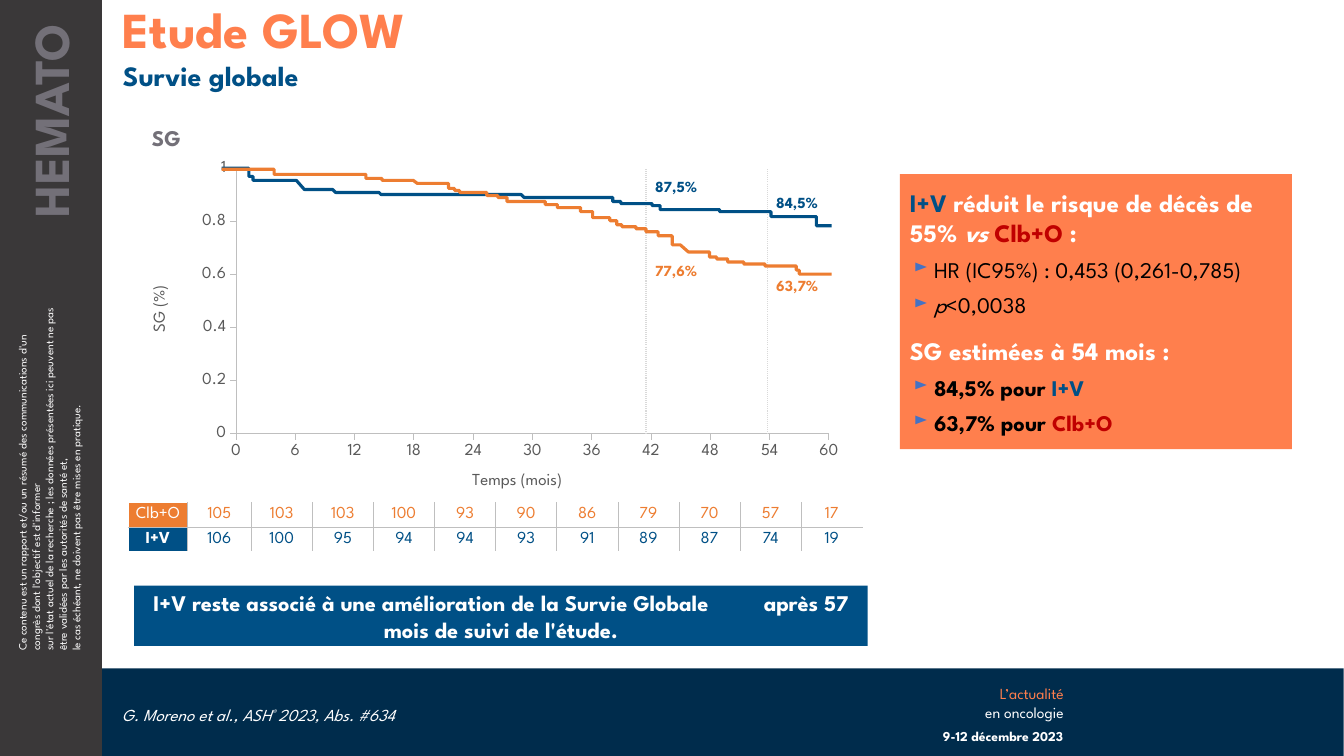
from lxml import etree
from pptx import Presentation
from pptx.chart.data import XyChartData
from pptx.dml.color import RGBColor
from pptx.enum.chart import XL_CHART_TYPE, XL_MARKER_STYLE, XL_TICK_MARK
from pptx.enum.dml import MSO_LINE
from pptx.enum.shapes import MSO_CONNECTOR, MSO_SHAPE
from pptx.enum.text import MSO_ANCHOR, PP_ALIGN
from pptx.oxml import parse_xml
from pptx.oxml.ns import nsdecls, qn
from pptx.util import Cm, Pt

FONT = "League Spartan"
WHITE = RGBColor(0xFF, 0xFF, 0xFF)
BLACK = RGBColor(0, 0, 0)
NAVY = RGBColor(0x00, 0x2C, 0x4C)
COAL = RGBColor(0x3A, 0x38, 0x39)
CORAL = RGBColor(0xFF, 0x7F, 0x4D)
BLUE = RGBColor(0x00, 0x50, 0x86)
ORANGE = RGBColor(0xED, 0x7D, 0x31)
RED = RGBColor(0xC0, 0x00, 0x00)
GREY = RGBColor(0x73, 0x70, 0x78)
INK = RGBColor(0x59, 0x59, 0x59)
RULE = RGBColor(0xBF, 0xBF, 0xBF)
PALE = RGBColor(0xD9, 0xD9, 0xD9)
TOP, MIDDLE = MSO_ANCHOR.TOP, MSO_ANCHOR.MIDDLE
LEFT, CENTER, RIGHT = PP_ALIGN.LEFT, PP_ALIGN.CENTER, PP_ALIGN.RIGHT
RECT, STRAIGHT = MSO_SHAPE.RECTANGLE, MSO_CONNECTOR.STRAIGHT
SCATTER, CIRCLE = XL_CHART_TYPE.XY_SCATTER, XL_MARKER_STYLE.CIRCLE
OUT, NONE = XL_TICK_MARK.OUTSIDE, XL_TICK_MARK.NONE
DOTS = MSO_LINE.ROUND_DOT

deck = Presentation()
deck.slide_width, deck.slide_height = Cm(33.87), Cm(19.05)
slide = deck.slides.add_slide(deck.slide_layouts[6])
shapes = slide.shapes


def box(left, top, wide, high, fill=None, anchor=TOP, align=LEFT, pads=(0.25, 0.13, 0.25, 0.13)):
    place = Cm(left), Cm(top), Cm(wide), Cm(high)
    if fill is None:
        shape = shapes.add_textbox(*place)
    else:
        shape = shapes.add_shape(RECT, *place)
        shape.shadow.inherit = False
        shape.fill.solid()
        shape.fill.fore_color.rgb = fill
        shape.line.fill.background()
    frame = shape.text_frame
    frame.word_wrap = True
    frame.vertical_anchor = anchor
    frame.margin_left, frame.margin_top, frame.margin_right, frame.margin_bottom = map(Cm, pads)
    frame.paragraphs[0].alignment = align
    return shape, frame.paragraphs[0]


def write(para, text, size, color, bold=False, italic=False):
    run = para.add_run()
    run.text = text
    font = run.font
    font.name, font.size, font.bold, font.italic = FONT, Pt(size), bold, italic
    font.color.rgb = color
    return run


# Footer and side band
box(2.57, 16.84, 31.29, 2.21, NAVY)
box(0, 0, 2.57, 19.05, COAL)

notice, para = box(-3.33, 11.1, 9.14, 1.96)
notice.rotation = 270
lines = [
    "Ce contenu est un rapport et/ou un résumé des communications d'un congrès dont l'objectif est d'informer",
    "sur l'état actuel de la recherche ; les données présentées ici peuvent ne pas être validées par les autorités de santé et,",
    "le cas échéant, ne doivent pas être mises en pratique.",
]
for row, line in enumerate(lines):
    if row:
        para.add_line_break()
    write(para, line, 8, WHITE)

topic, para = box(-2.64, 3, 7.8, 1.8, align=RIGHT, pads=(0.25, 0.13, 0.61, 0.13))
topic.rotation = 270
write(para, "HEMATO", 36, GREY, True)

para = box(22.89, 17.12, 4.17, 1.19, align=RIGHT)[1]
write(para, "L’actualité", 11, CORAL)
para.add_line_break()
write(para, "en oncologie", 11, WHITE)
para = box(22.89, 18.21, 3.91, 0.69, align=RIGHT, pads=(0.25, 0.13, 0, 0.13))[1]
write(para, "9-12 décembre 2023", 9.7, WHITE, True)

para = box(2.82, 17.63, 14.33, 0.69)[1]
write(para, "G. Moreno et al., ASH", 12, WHITE, italic=True)
mark = write(para, "® ", 12, WHITE, italic=True)
mark.font._element.set("baseline", "30000")
write(para, "2023, Abs. #634", 12, WHITE, italic=True)

# Titles
for top, high, text, size, color in [
    (0, 1.45, "Etude GLOW", 36, CORAL),
    (1.45, 0.94, "Survie globale", 20, BLUE),
]:
    para = box(2.59, top, 31.27, high, pads=(0.51, 0.13, 0.25, 0.13))[1]
    para.line_spacing = 0.9
    write(para, text, size, color, True)

# Chart with the axes
data = XyChartData()
data.add_series("Series 1").add_data_point(0.7, 2.7)
chart = shapes.add_chart(SCATTER, Cm(3.56), Cm(3.84), Cm(17.96), Cm(9.07), data).chart
chart.has_legend = chart.has_title = False
chart.font.name, chart.font.size = FONT, Pt(10)
chart.font.color.rgb = BLACK
plot = chart.plots[0]
plot.vary_by_categories = False
series = plot.series[0]
series.smooth = False
series.format.line.fill.background()
series.marker.style, series.marker.size = CIRCLE, 5
series.marker.format.fill.background()
series.marker.format.line.fill.background()

LAYOUT = "<c:layout %s><c:manualLayout>%s</c:manualLayout></c:layout>"
for axis, title, high, step, left, top in [
    (chart.category_axis, "Temps (mois)", 60, 6, 0.46, 0.88),
    (chart.value_axis, "SG (%)", 1, 0.2, 0.01, 0.36),
]:
    axis.minimum_scale, axis.maximum_scale, axis.major_unit = 0, high, step
    axis.has_major_gridlines = False
    axis.major_tick_mark, axis.minor_tick_mark = OUT, NONE
    axis.format.line.color.rgb = RULE
    axis.format.line.width = Pt(0.75)
    labels = axis.tick_labels
    labels.font.name, labels.font.size = FONT, Pt(12)
    labels.font.color.rgb = INK
    labels.number_format, labels.number_format_is_linked = "General", False
    write(axis.axis_title.text_frame.paragraphs[0], title, 12, INK)
    node = axis.axis_title._element
    for old in node.findall(qn("c:layout")):
        node.remove(old)
    spot = f'<c:xMode val="edge"/><c:yMode val="edge"/><c:x val="{left}"/><c:y val="{top}"/>'
    node.find(qn("c:tx")).addnext(parse_xml(LAYOUT % (nsdecls("c"), spot)))

area = chart._chartSpace.chart.plotArea
for old in area.findall(qn("c:layout")):
    area.remove(old)
area.insert(0, parse_xml(LAYOUT % (nsdecls("c"), (
    '<c:layoutTarget val="inner"/><c:xMode val="edge"/><c:yMode val="edge"/>'
    '<c:x val="0.133"/><c:y val="0.045"/><c:w val="0.832"/><c:h val="0.737"/>'))))

# Dotted guides at 42 and 54 months
for left in (16.28, 19.35):
    guide = shapes.add_connector(STRAIGHT, Cm(left), Cm(4.26), Cm(left), Cm(10.95))
    guide.line.color.rgb = PALE
    guide.line.width, guide.line.dash_style = Pt(0.75), DOTS
    etree.SubElement(guide._element.spPr, qn("a:effectLst"))

# Survival curves: drop position, new level, and width of a sloped drop
trial = [(247, 175), (251, 179), (294, 188, 8), (330, 191, 3), (376, 193, 2), (517, 196, 3),
         (608, 200), (616, 202), (647, 204), (655, 208), (714, 210), (765, 215), (810, 224)]
chemo = [(272, 173), (363, 177), (379, 179), (410, 182, 4), (445, 187), (451, 189), (456, 191),
         (483, 194), (494, 196), (503, 200), (541, 203), (553, 206), (576, 210), (588, 216),
         (605, 219), (612, 223), (617, 225), (631, 227), (641, 230), (653, 234), (667, 243),
         (675, 250, 8), (704, 255), (711, 257), (722, 260), (738, 262), (759, 264), (790, 268),
         (793, 272)]
for level, drops, color in [(167, trial, BLUE), (168, chemo, ORANGE)]:
    build = shapes.build_freeform(220, level, scale=Cm(2.54) / 100)
    points = []
    for left, lower, *slope in drops:
        points += [(left, level), (left + sum(slope), lower)]
        level = lower
    build.add_line_segments(points + [(825, level)], close=False)
    curve = build.convert_to_shape()
    curve.shadow.inherit = False
    curve.fill.background()
    curve.line.color.rgb = color
    curve.line.width = Pt(2.25)

for left, top, text, color in [
    (16.51, 4.32, "87,5%", BLUE), (16.51, 6.43, "77,6%", ORANGE),
    (19.56, 4.72, "84,5%", BLUE), (19.56, 6.81, "63,7%", ORANGE),
]:
    para = box(left, top, 1.6, 0.76, anchor=MIDDLE, pads=(0, 0, 0, 0))[1]
    write(para, text, 11, color, True)
para = box(3.58, 2.92, 2.06, 1.07, WHITE, MIDDLE)[1]
write(para, "SG", 16, GREY, True)

# Patients at risk
risk = [
    ("Clb+O", [105, 103, 103, 100, 93, 90, 86, 79, 70, 57, 17], ORANGE),
    ("I+V", [106, 100, 95, 94, 94, 93, 91, 89, 87, 74, 19], BLUE),
]
table = shapes.add_table(2, 12, Cm(3.23), Cm(12.67), Cm(18.5), Cm(1.22)).table
table.first_row = table.horz_banding = False
for col, wide in enumerate([1.5, 1.6] + [1.54] * 10):
    table.columns[col].width = Cm(wide)
for row, (name, counts, color) in enumerate(risk):
    table.rows[row].height = Cm(0.61)
    for col, text in enumerate([name] + counts):
        cell = table.cell(row, col)
        cell.margin_left = cell.margin_right = cell.margin_top = cell.margin_bottom = 0
        cell.vertical_anchor = MIDDLE
        para = cell.text_frame.paragraphs[0]
        para.alignment = CENTER
        write(para, str(text), 12, color if col else WHITE, not col and row == 1)
        if col:
            cell.fill.background()
        else:
            cell.fill.solid()
            cell.fill.fore_color.rgb = color
        edges = {"lnL": RULE if col else WHITE, "lnR": RULE if col < 11 else WHITE,
                 "lnT": RULE if row else WHITE, "lnB": WHITE if row else RULE}
        for spot, (edge, tint) in enumerate(edges.items()):
            cell._tc.tcPr.insert(spot, parse_xml(
                f'<a:{edge} {nsdecls("a")} w="6350"><a:solidFill><a:srgbClr val="{tint}"/>'
                f'</a:solidFill></a:{edge}>'))

# Conclusion, with one wide space
para = box(3.38, 14.76, 18.49, 1.52, BLUE, MIDDLE, CENTER)[1]
write(para, "I+V reste associé à une amélioration de la Survie Globale", 16, WHITE, True)
gap = write(para, " ", 16, WHITE, True)
gap.font._element.set("spc", "3500")
write(para, "après 57 mois de suivi de l'étude.", 16, WHITE, True)

# Key results: bullet flag, space before and after, then the runs
para = box(22.68, 4.39, 9.88, 6.93, CORAL, MIDDLE)[1]
frame = para._parent
for row, (bullet, before, after, runs) in enumerate([
    (False, 0, 6, [("I+V ", BLUE, True), ("réduit le risque de décès de 55% ", WHITE, True),
                   ("vs ", WHITE, True, True), ("Clb+O ", RED, True), (":", WHITE, True)]),
    (True, 0, 6, [("HR (IC95%) : 0,453 (0,261-0,785)", BLACK)]),
    (True, 0, 0, [("p", BLACK, False, True), ("<0,0038", BLACK)]),
    (False, 12, 6, [("SG estimées à 54 mois :", WHITE, True)]),
    (True, 0, 6, [("84,5% pour ", BLACK, True), ("I+V", BLUE, True)]),
    (True, 0, 0, [("63,7% pour ", BLACK, True), ("Clb+O", RED, True)]),
]):
    if row:
        para = frame.add_paragraph()
    para.alignment = LEFT
    if bullet:
        para.level = 1
        props = para._p.get_or_add_pPr()
        props.set("marL", str(Cm(0.61)))
        props.set("indent", str(-Cm(0.51)))
        color = etree.SubElement(props, qn("a:buClr"))
        etree.SubElement(color, qn("a:srgbClr"), val="4472C4")
        etree.SubElement(props, qn("a:buSzPct"), val="80000")
        etree.SubElement(props, qn("a:buChar"), char="►")
    para.space_before, para.space_after = Pt(before), Pt(after)
    for text, *look in runs:
        write(para, text, 16 if bullet else 18, *look)

deck.save("out.pptx")
